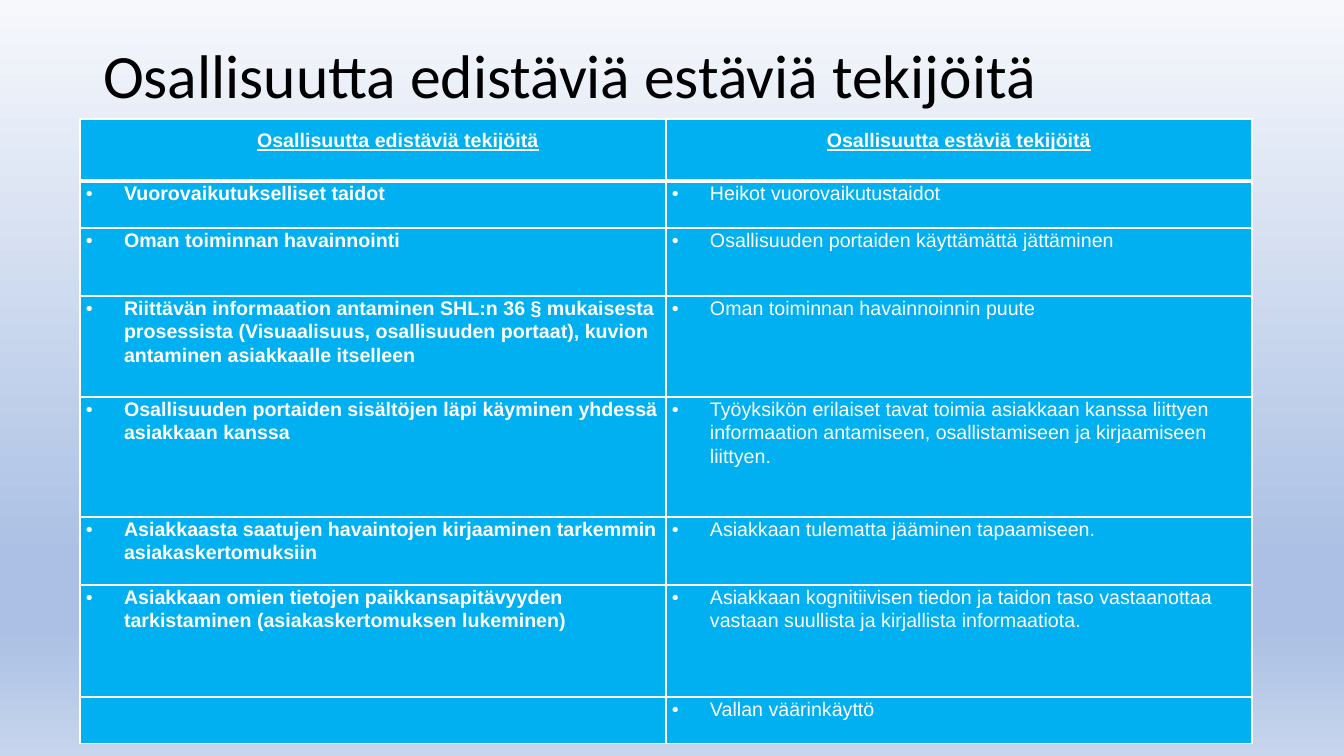
from copy import deepcopy
from typing import NamedTuple

from pptx import Presentation
from pptx.dml.color import RGBColor
from pptx.enum.text import MSO_ANCHOR as Anchor, PP_ALIGN as Align
from pptx.oxml import parse_xml
from pptx.oxml.ns import nsdecls, qn
from pptx.util import Emu, Pt

EMU_PER_PX = 12192000 / 1344
WHITE, BLACK, CELL_BLUE = "FFFFFF", "000000", "00B0F0"
GRADIENT = [(0, "F6F8FC"), (74, "ABC0E4"), (83, "ABC0E4"), (100, "C7D5ED")]
TITLE = "Osallisuutta edistäviä estäviä tekijöitä"


class Row(NamedTuple):
    height: int
    promoting: str
    preventing: str


ROWS = [
    Row(62, "Osallisuutta edistäviä tekijöitä", "Osallisuutta estäviä tekijöitä"),
    Row(47, "Vuorovaikutukselliset taidot", "Heikot vuorovaikutustaidot"),
    Row(68, "Oman toiminnan havainnointi",
        "Osallisuuden portaiden käyttämättä jättäminen"),
    Row(101, "Riittävän informaation antaminen SHL:n 36 § mukaisesta prosessista "
        "(Visuaalisuus, osallisuuden portaat), kuvion antaminen asiakkaalle itselleen",
        "Oman toiminnan havainnoinnin puute"),
    Row(120, "Osallisuuden portaiden sisältöjen läpi käyminen yhdessä asiakkaan kanssa",
        "Työyksikön erilaiset tavat toimia asiakkaan kanssa liittyen informaation "
        "antamiseen, osallistamiseen ja kirjaamiseen liittyen."),
    Row(68, "Asiakkaasta saatujen havaintojen kirjaaminen tarkemmin asiakaskertomuksiin",
        "Asiakkaan tulematta jääminen tapaamiseen."),
    Row(112, "Asiakkaan omien tietojen paikkansapitävyyden tarkistaminen "
        "(asiakaskertomuksen lukeminen)",
        "Asiakkaan kognitiivisen tiedon ja taidon taso vastaanottaa vastaan "
        "suullista ja kirjallista informaatiota."),
    Row(47, "", "Vallan väärinkäyttö"),
]


def px(length: int) -> Emu:
    return Emu(round(length * EMU_PER_PX))


def color(code: str) -> RGBColor:
    return RGBColor.from_string(code)


def paint_background(page) -> None:
    fill = page.background.fill
    fill.gradient()
    fill.gradient_angle = 270
    stop_list = next(page.element.iter(qn("a:gsLst")))
    while len(stop_list) < len(GRADIENT):
        stop_list.append(deepcopy(stop_list[0]))
    for stop, (percent, code) in zip(fill.gradient_stops, GRADIENT):
        stop.position = percent / 100
        stop.color.rgb = color(code)


def add_title(page) -> None:
    title = page.shapes.title
    title.left, title.top, title.width, title.height = map(px, (93, 40, 1159, 147))
    frame = title.text_frame
    frame.text = TITLE
    frame.vertical_anchor = Anchor.TOP
    para = frame.paragraphs[0]
    para.alignment = Align.LEFT
    para.line_spacing = 0.9
    para.font.name, para.font.size = "Calibri", Pt(44)
    para.font.color.rgb = color(BLACK)


def set_borders(cell, top: int, bottom: int) -> None:
    """Draw white borders; top and bottom widths are in points."""
    properties = cell._tc.get_or_add_tcPr()
    for side, width in (("L", 1), ("R", 1), ("T", top), ("B", bottom)):
        properties.append(parse_xml(
            f'<a:ln{side} {nsdecls("a")} w="{Pt(width)}"><a:solidFill>'
            f'<a:srgbClr val="{WHITE}"/></a:solidFill></a:ln{side}>'))


def indent(para, margin: int, first_line: int = 0) -> None:
    properties = para._p.get_or_add_pPr()
    properties.set("marL", str(px(margin)))
    properties.set("indent", str(px(first_line)))


def add_bullet(para) -> None:
    indent(para, 38, -38)
    properties = para._p.get_or_add_pPr()
    for tag in ('buFont {} typeface="Arial"', 'buChar {} char="•"'):
        properties.append(parse_xml(f'<a:{tag.format(nsdecls("a"))}/>'))


def fill_cell(cell, text: str, row: int, column: int) -> None:
    is_header = row == 0
    set_borders(cell, top=3 if row == 1 else 1, bottom=3 if is_header else 1)
    cell.fill.solid()
    cell.fill.fore_color.rgb = color(CELL_BLUE)
    cell.margin_left = cell.margin_right = px(6)
    cell.margin_top = cell.margin_bottom = 0
    cell.text = text
    para = cell.text_frame.paragraphs[0]
    font = para.font
    font.name, font.size = "Arial", Pt(14)
    font.bold = is_header or column == 0
    font.color.rgb = color(WHITE)
    para.line_spacing = 1.5 if is_header else 1.07
    if is_header:
        font.underline = True
        para.alignment = Align.CENTER
        indent(para, 50 if column == 0 else 0)
    elif text:
        add_bullet(para)


def add_factor_table(page) -> None:
    height = sum(row.height for row in ROWS)
    frame = page.shapes.add_table(len(ROWS), 2, px(80), px(119), px(1172), px(height))
    table = frame.table
    table.horz_banding = False
    for index, row in enumerate(ROWS):
        table.rows[index].height = px(row.height)
        for column, text in enumerate((row.promoting, row.preventing)):
            fill_cell(table.cell(index, column), text, index, column)


def main() -> None:
    deck = Presentation()
    deck.slide_width, deck.slide_height = px(1344), px(756)
    page = deck.slides.add_slide(deck.slide_layouts.get_by_name("Title Only"))
    paint_background(page)
    add_title(page)
    add_factor_table(page)
    deck.save("out.pptx")


if __name__ == "__main__":
    main()
